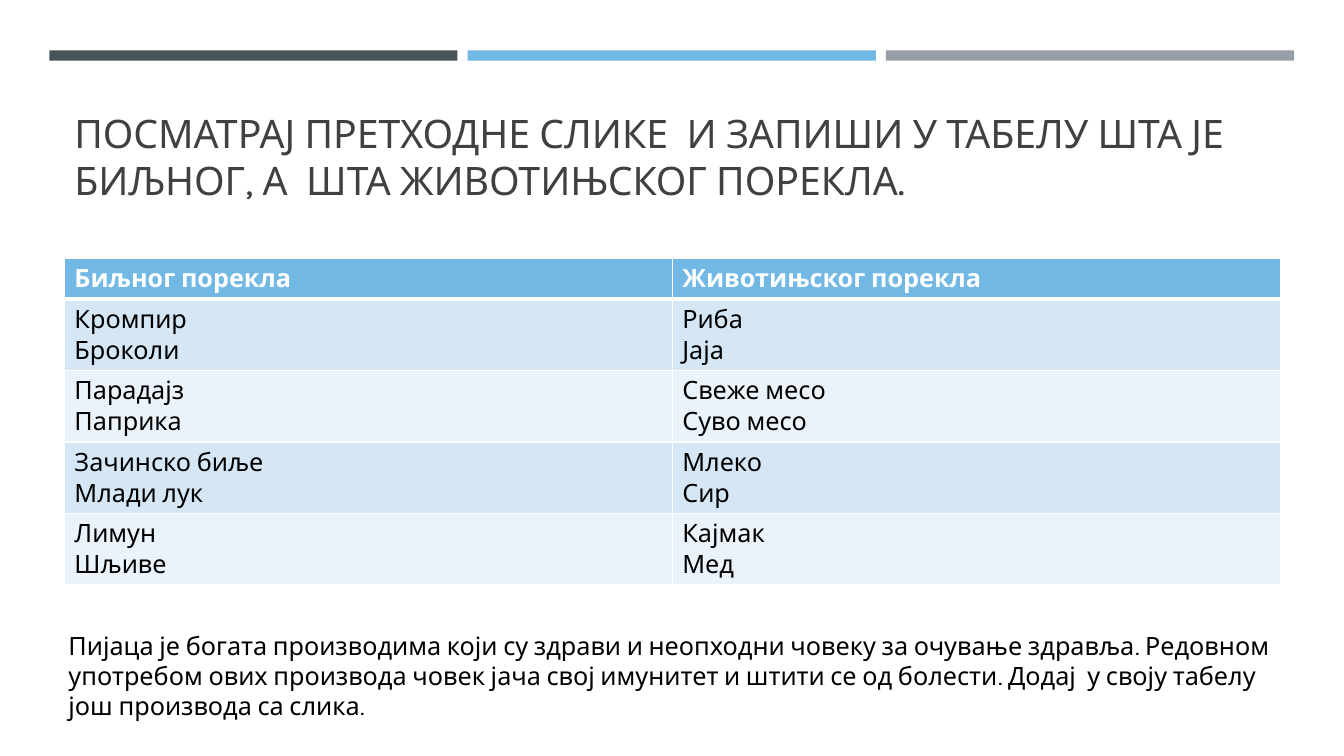
"""Build a slide with a table of foods of plant and animal origin."""
from lxml.etree import SubElement
from pptx import Presentation
from pptx.dml.color import RGBColor
from pptx.enum.shapes import MSO_SHAPE as Shape
from pptx.enum.text import MSO_ANCHOR as Anchor
from pptx.oxml.ns import qn
from pptx.util import Pt

SLATE = RGBColor(0x46, 0x53, 0x59)
SKY = RGBColor(0x71, 0xB9, 0xE4)
GREY = RGBColor(0x96, 0x9F, 0xA7)
BAND_DARK = RGBColor(0xD5, 0xE6, 0xF5)
BAND_LIGHT = RGBColor(0xEB, 0xF3, 0xFA)
CHARCOAL = RGBColor(0x40, 0x40, 0x40)
BLACK = RGBColor(0, 0, 0)
WHITE = RGBColor(0xFF, 0xFF, 0xFF)

HEADING = "ПОСМАТРАЈ ПРЕТХОДНЕ СЛИКЕ  И ЗАПИШИ У ТАБЕЛУ ШТА ЈЕ БИЉНОГ, А  ШТА ЖИВОТИЊСКОГ ПОРЕКЛА."
SUMMARY = (
    "Пијаца је богата производима који су здрави и неопходни човеку за очување здравља. "
    "Редовном употребом ових производа човек јача свој имунитет и штити се од болести. "
    "Додај  у своју табелу још производа са слика."
)
FOODS = [
    [["Биљног порекла"], ["Животињског порекла"]],
    [["Кромпир", "Броколи"], ["Риба", "Јаја"]],
    [["Парадајз", "Паприка"], ["Свеже месо", "Суво месо"]],
    [["Зачинско биље", "Млади лук"], ["Млеко", "Сир"]],
    [["Лимун", "Шљиве"], ["Кајмак", "Мед"]],
]


class SlideBuilder:
    """Hold the style and the current slide."""

    title_font, body_font = "Karla", "Cabin"
    title_size, body_size = 28, 18

    def __init__(self, slide):
        self.slide = slide

    def add_lines(self, frame, lines, font, size, color, bold=False):
        """Add one run per line, each in its own paragraph."""
        for index, line in enumerate(lines):
            paragraph = frame.add_paragraph() if index else frame.paragraphs[0]
            run = paragraph.add_run()
            run.text = line
            run.font.name, run.font.size = font, Pt(size)
            run.font.bold, run.font.color.rgb = bold, color

    def bar(self, left, top, width, height, color):
        """Draw a plain filled bar."""
        bar = self.slide.shapes.add_shape(Shape.RECTANGLE, Pt(left), Pt(top), Pt(width), Pt(height))
        bar.shadow.inherit = False
        bar.fill.solid()
        bar.fill.fore_color.rgb = color
        bar.line.fill.background()

    def text(self, left, top, width, height, words, font, size, color, anchor=Anchor.TOP):
        """Add a wrapping text box."""
        frame = self.slide.shapes.add_textbox(Pt(left), Pt(top), Pt(width), Pt(height)).text_frame
        frame.word_wrap = True
        frame.vertical_anchor = anchor
        self.add_lines(frame, [words], font, size, color)

    def border(self, cell, side, width):
        """Give one side of a cell a white line."""
        line = SubElement(cell._tc.get_or_add_tcPr(), qn(f"a:ln{side}"), w=str(Pt(width)))
        SubElement(SubElement(line, qn("a:solidFill")), qn("a:srgbClr"), val=str(WHITE))

    def table(self, left, top, width, header_height, row_height, rows):
        """Add a banded table with a header row."""
        height = header_height + row_height * (len(rows) - 1)
        table = self.slide.shapes.add_table(
            len(rows), len(rows[0]), Pt(left), Pt(top), Pt(width), Pt(height)
        ).table
        for r, row in enumerate(rows):
            header = r == 0
            table.rows[r].height = Pt(header_height if header else row_height)
            band = SKY if header else BAND_DARK if r % 2 else BAND_LIGHT
            for c, lines in enumerate(row):
                cell = table.cell(r, c)
                for side in "LRTB":
                    header_rule = (header and side == "B") or (r == 1 and side == "T")
                    self.border(cell, side, 3 if header_rule else 1)
                cell.fill.solid()
                cell.fill.fore_color.rgb = band
                ink = WHITE if header else BLACK
                self.add_lines(cell.text_frame, lines, self.body_font, self.body_size, ink, header)


def main():
    """Build and save the slide."""
    deck = Presentation()
    deck.slide_width, deck.slide_height = Pt(960), Pt(540)
    page = SlideBuilder(deck.slides.add_slide(deck.slide_layouts[6]))
    for index, color in enumerate((SLATE, SKY, GREY)):
        page.bar(35.2 + index * 298.8, 36, 291.6, 7.4, color)
    page.text(46, 55.4, 868.4, 93.6, HEADING, page.title_font, page.title_size, CHARCOAL, Anchor.BOTTOM)
    page.table(46, 184.5, 868.4, 29.2, 51, FOODS)
    page.text(41.8, 446.4, 872.6, 51, SUMMARY, page.body_font, page.body_size, BLACK)
    deck.save("out.pptx")


if __name__ == "__main__":
    main()
